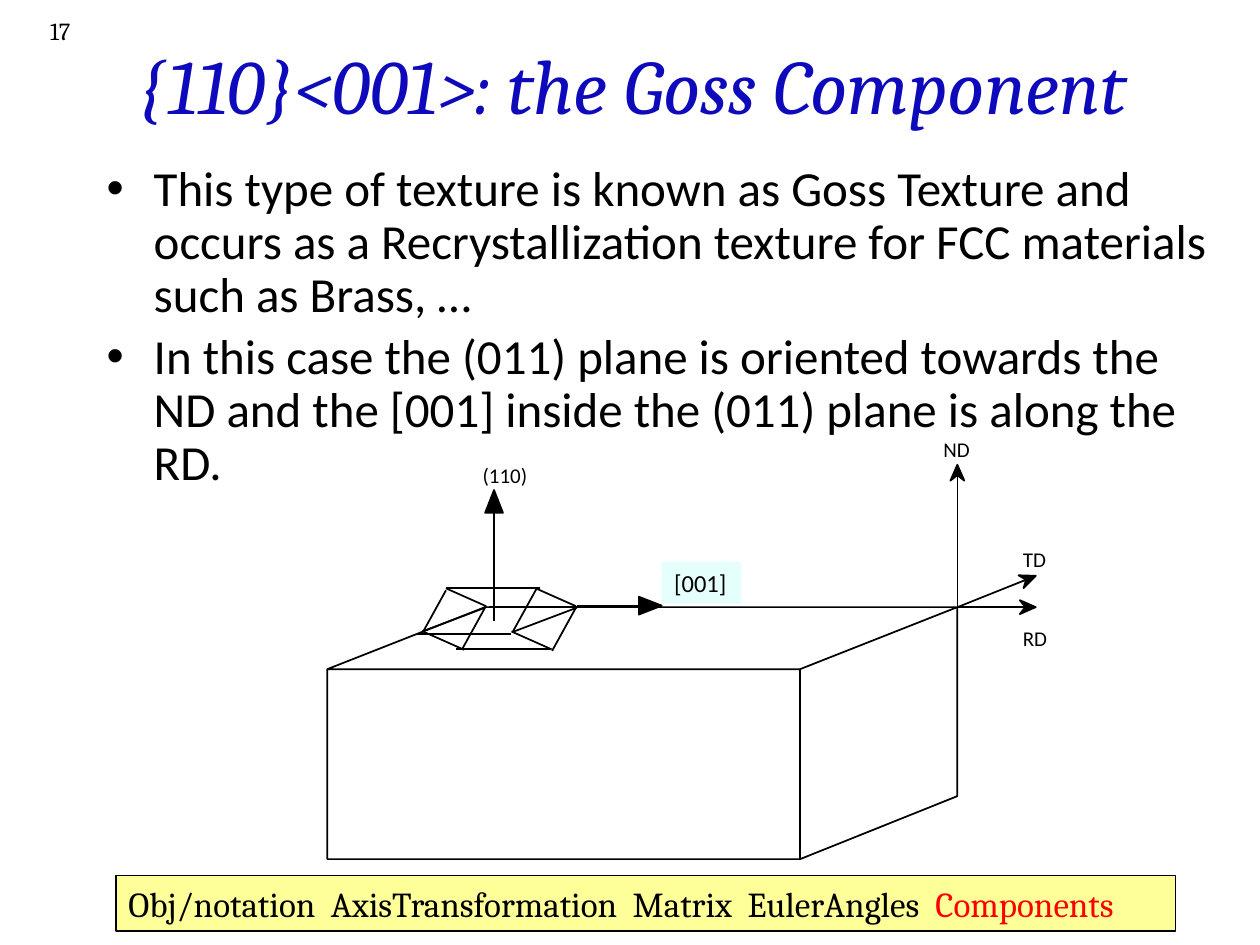
from math import hypot

from lxml import etree
from pptx import Presentation
from pptx.dml.color import RGBColor
from pptx.enum.shapes import MSO_CONNECTOR, MSO_SHAPE
from pptx.enum.text import MSO_ANCHOR, PP_ALIGN
from pptx.oxml.ns import qn
from pptx.util import Cm, Pt

STRAIGHT = MSO_CONNECTOR.STRAIGHT
RECTANGLE = MSO_SHAPE.RECTANGLE
MIDDLE = MSO_ANCHOR.MIDDLE
LEFT, CENTER, RIGHT = PP_ALIGN.LEFT, PP_ALIGN.CENTER, PP_ALIGN.RIGHT

BLACK, WHITE, RED, BLUE = "000000", "FFFFFF", "FF0000", "0E0ABC"
YELLOW, PALE_CYAN = "FFFF99", "E5FFFD"
SERIF, SANS = "Cambria", "Calibri"

BULLETS = [
    "This type of texture is known as Goss Texture and occurs as a "
    "Recrystallization texture for FCC materials such as Brass, …",
    "In this case the (011) plane is oriented towards the ND and the [001] "
    "inside the (011) plane is along the RD.",
]

# Sheet corners in cm
FRONT_LEFT, FRONT_RIGHT = (6.6, 13.49), (16.13, 13.49)
BACK_LEFT, BACK_RIGHT = (9.78, 12.24), (19.3, 12.24)
LOW_LEFT, LOW_FRONT, LOW_BACK = (6.6, 17.32), (16.13, 17.32), (19.3, 16.05)
SHEET = [FRONT_RIGHT, FRONT_LEFT, FRONT_RIGHT, LOW_FRONT, FRONT_RIGHT,
         BACK_RIGHT, LOW_BACK, LOW_FRONT, LOW_LEFT, FRONT_LEFT,
         BACK_LEFT, BACK_RIGHT]

# Unit cell: edge direction -> starting points of the parallel edges, in cm
CELL_EDGES = {
    (1.9, 0): [(9.86, 12.24), (8.41, 12.78), (8.99, 11.86), (9.19, 13.08)],
    (0.48, -0.87): [(8.51, 12.77), (10.34, 12.73), (9.32, 13.08), (11.13, 13.12)],
    (0.81, 0.36): [(8.99, 11.86), (8.55, 12.74), (10.31, 12.73), (10.8, 11.86)],
    (1.27, -0.48): [(8.51, 12.73), (10.36, 12.73)],
}

# Arrowheads in cm: length, half width, distance from tip to shaft
BARBED, TRIANGLE = (0.32, 0.14, 0.21), (0.46, 0.18, 0.46)
# Start, tip, arrowhead
ARROWS = [
    (BACK_RIGHT, (20.88, 12.24), BARBED),
    (BACK_RIGHT, (19.3, 9.37), BARBED),
    (BACK_RIGHT, (20.88, 11.61), BARBED),
    ((9.96, 12.52), (9.96, 9.88), TRIANGLE),
    ((11.63, 12.21), (13.34, 12.21), TRIANGLE),
]

LABELS = [("RD", 20.62, 12.62, 0.7), ("ND", 19.02, 8.81, 0.7),
          ("TD", 20.62, 11.02, 0.7), ("(110)", 9.73, 9.32, 1.1)]


def rgb(color):
    return RGBColor.from_string(color)


def format_runs(p, font, size, color=BLACK, italic=False, align=LEFT):
    p.alignment = align
    for r in p.runs:
        r.font.name, r.font.size, r.font.italic = font, Pt(size), italic
        r.font.color.rgb = rgb(color)


def add_text(s, text, x, y, w, h, font, size, align=LEFT, inset=True):
    """Add a text box; without inset its text starts at the box corner."""
    tf = s.shapes.add_textbox(Cm(x), Cm(y), Cm(w), Cm(h)).text_frame
    tf.word_wrap = True
    if not inset:
        tf.margin_left = tf.margin_right = tf.margin_top = tf.margin_bottom = 0
    tf.text = text
    for p in tf.paragraphs:
        format_runs(p, font, size, align=align)
    return tf


def add_bullets(s):
    tf = add_text(s, "\n".join(BULLETS), 1.9, 3.18, 23.06, 12.9, SANS, 28)
    for p in tf.paragraphs:
        p.line_spacing, p.space_before = 0.9, Pt(5.6)
        pPr = p._p.get_or_add_pPr()
        pPr.set("marL", str(Cm(0.95)))
        pPr.set("indent", str(Cm(-0.95)))
        etree.SubElement(pPr, qn("a:buFont")).set("typeface", "Arial")
        etree.SubElement(pPr, qn("a:buChar")).set("char", "•")


def paint(sp, fill, line_width=None):
    sp.shadow.inherit = False
    sp.fill.solid()
    sp.fill.fore_color.rgb = rgb(fill)
    if line_width:
        sp.line.color.rgb = rgb(BLACK)
        sp.line.width = Pt(line_width)
    else:
        sp.line.fill.background()


def add_line(s, start, end):
    line = s.shapes.add_connector(STRAIGHT, *map(Cm, start + end))
    line.line.color.rgb = rgb(BLACK)
    line.line.width = Pt(1)
    etree.SubElement(line._element.spPr, qn("a:effectLst"))


def add_outline(s, corners, fill):
    points = [(Cm(x), Cm(y)) for x, y in corners]
    builder = s.shapes.build_freeform(*points[0], scale=1.0)
    builder.add_line_segments(points[1:], close=True)
    paint(builder.convert_to_shape(), fill, 1)


def add_arrow(s, start, tip, head):
    length, half_width, notch = head
    dx, dy = tip[0] - start[0], tip[1] - start[1]
    ux, uy = dx / hypot(dx, dy), dy / hypot(dx, dy)

    def behind_tip(back, side):
        return tip[0] - back * ux - side * uy, tip[1] - back * uy + side * ux

    shaft_end = behind_tip(notch, 0)
    add_line(s, start, shaft_end)
    add_outline(s, [tip, behind_tip(length, half_width), shaft_end,
                    behind_tip(length, -half_width)], BLACK)


def add_panel(s, text, x, y, w, h, fill, font, size, line_width=None, wrap=True):
    """Add a filled rectangle with left-aligned text and return its paragraph."""
    sp = s.shapes.add_shape(RECTANGLE, Cm(x), Cm(y), Cm(w), Cm(h))
    paint(sp, fill, line_width)
    tf = sp.text_frame
    tf.word_wrap = wrap
    tf.text = text
    p = tf.paragraphs[0]
    format_runs(p, font, size)
    return p


def add_title(s):
    title = s.shapes.title
    title.left, title.top, title.width, title.height = map(Cm, (0.38, 0.2, 24.76, 2.97))
    tf = title.text_frame
    tf.text = "{110}<001>: the Goss Component"
    tf.vertical_anchor = MIDDLE
    format_runs(tf.paragraphs[0], SERIF, 44, BLUE, italic=True, align=CENTER)


def add_footer(s):
    p = add_panel(s, "Obj/notation  AxisTransformation  Matrix  EulerAngles  ",
                  2.34, 17.65, 21.36, 1.12, YELLOW, SERIF, 20, line_width=0.75)
    p.add_run().text = "Components"
    format_runs(p, SERIF, 20)
    p.runs[-1].font.color.rgb = rgb(RED)


def main():
    prs = Presentation()
    prs.slide_width, prs.slide_height = Cm(25.4), Cm(19.05)
    s = prs.slides.add_slide(prs.slide_layouts[5])
    add_text(s, "17", 0.2, 0.2, 1.47, 1.07, SERIF, 14, align=RIGHT)
    add_title(s)
    add_bullets(s)
    add_outline(s, SHEET, WHITE)
    for (dx, dy), starts in CELL_EDGES.items():
        for x, y in starts:
            add_line(s, (x, y), (x + dx, y + dy))
    for start, tip, head in ARROWS:
        add_arrow(s, start, tip, head)
    for text, x, y, w in LABELS:
        add_text(s, text, x, y, w, 0.51, SANS, 12, inset=False)
    add_footer(s)
    add_panel(s, "[001]", 13.34, 11.33, 1.6, 0.84, PALE_CYAN, SANS, 14, wrap=False)
    prs.save("out.pptx")


if __name__ == "__main__":
    main()
